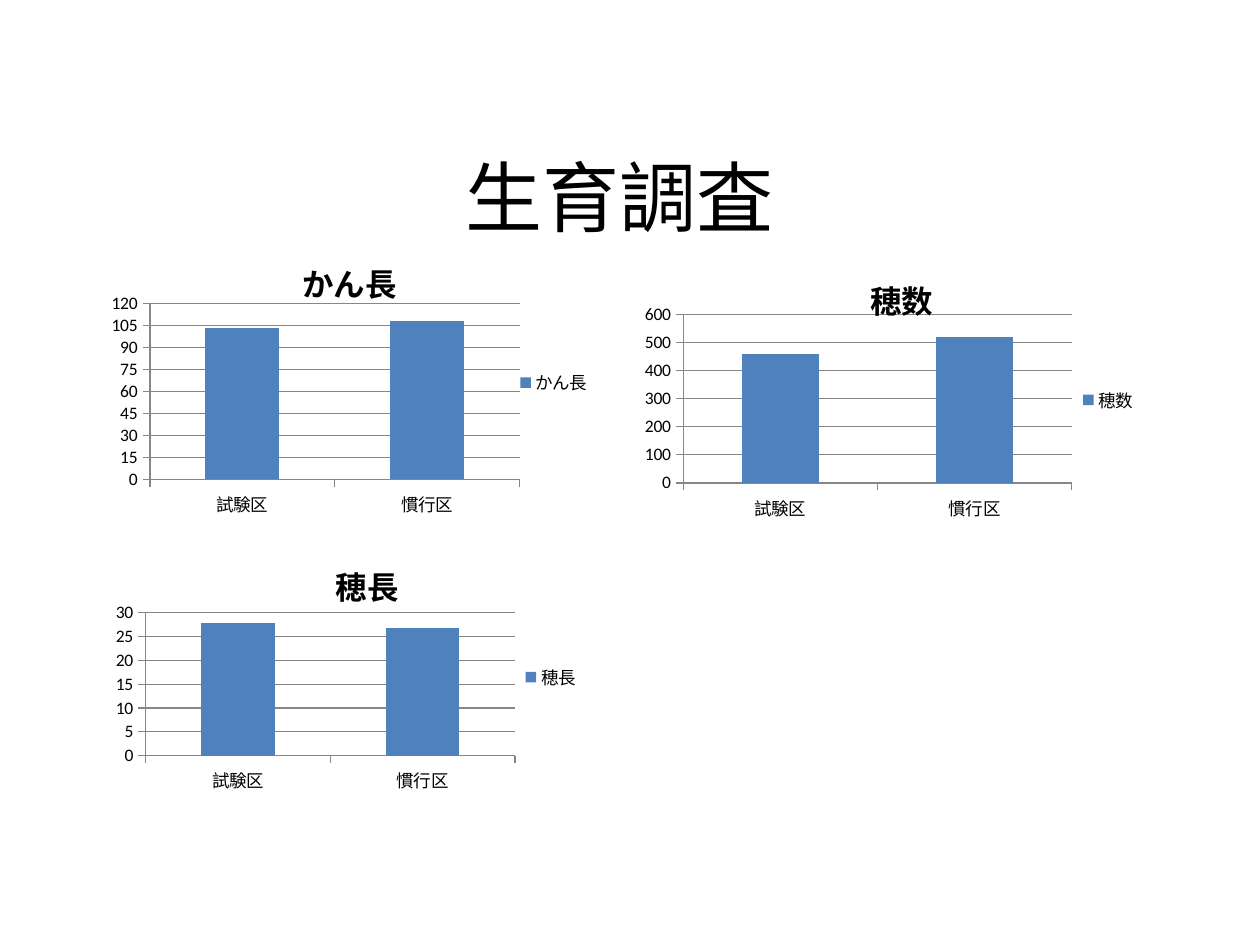
from lxml import etree
from pptx import Presentation
from pptx.chart.data import CategoryChartData
from pptx.dml.color import RGBColor
from pptx.enum.chart import XL_CHART_TYPE, XL_LEGEND_POSITION, XL_TICK_MARK
from pptx.enum.text import MSO_ANCHOR, PP_ALIGN
from pptx.oxml import parse_xml
from pptx.oxml.ns import nsdecls, qn
from pptx.util import Cm, Pt

BLACK = RGBColor(0x00, 0x00, 0x00)
BLUE = RGBColor(0x4F, 0x81, 0xBD)
GRAY = RGBColor(0x86, 0x86, 0x86)
LATIN_FONT = "Calibri"
TITLE_FONT = "Noto Sans CJK JP"

# Content: box in cm; plot area, heading and legend as fractions of the chart
TITLE = "生育調査"
PLOTS = ["試験区", "慣行区"]
CHARTS = [
    dict(name="かん長", values=(103, 108), box=(1.9, 4.93, 10.21, 5.79),
         top=120, step=15, plot=(0.11, 0.205, 0.73, 0.613),
         heading=(0.4, 0.02), legend=(0.83, 0.42)),
    dict(name="穂数", values=(460, 520), box=(12.7, 5.33, 10.74, 5.41),
         top=600, step=None, plot=(0.1, 0.186, 0.729, 0.629),
         heading=(0.44, 0.01), legend=(0.84, 0.44)),
    dict(name="穂長", values=(27.8, 26.7), box=(1.9, 10.92, 11, 5.41),
         top=None, step=5, plot=(0.094, 0.265, 0.677, 0.533),
         heading=None, legend=(0.78, 0.44)),
]


def place(part, fractions):
    """Fix a chart part at x, y and, for the plot area, width and height."""
    for old in part.findall(qn("c:layout")):
        part.remove(old)
    target = '<c:layoutTarget val="inner"/>' if len(fractions) == 4 else ""
    sizes = "".join(f'<c:{tag} val="{value}"/>'
                    for tag, value in zip("xywh", fractions))
    layout = parse_xml(
        f'<c:layout {nsdecls("c")}><c:manualLayout>{target}'
        '<c:xMode val="edge"/><c:yMode val="edge"/>'
        f'{sizes}</c:manualLayout></c:layout>')
    overlay = part.find(qn("c:overlay"))
    part.insert(0 if overlay is None else part.index(overlay), layout)


def add_column_chart(s, name, values, box, top, step, plot, heading, legend):
    data = CategoryChartData()
    data.categories = PLOTS
    data.add_series(name, values)
    chart = s.shapes.add_chart(XL_CHART_TYPE.COLUMN_CLUSTERED,
                               *map(Cm, box), data).chart
    chart.font.name = LATIN_FONT
    chart.font.size = Pt(10)
    chart.font.color.rgb = BLACK

    # Chart title and legend
    tf = chart.chart_title.text_frame
    tf.text = name
    font = tf.paragraphs[0].runs[0].font
    font.name, font.size, font.bold = LATIN_FONT, Pt(18), True
    font.color.rgb = BLACK
    chart.has_legend = True
    chart.legend.position = XL_LEGEND_POSITION.RIGHT
    chart.legend.include_in_layout = False

    # Axes
    value_axis = chart.value_axis
    value_axis.minimum_scale = 0
    value_axis.maximum_scale = top
    value_axis.major_unit = step
    value_axis.has_major_gridlines = True
    for part in (value_axis, chart.category_axis, value_axis.major_gridlines):
        part.format.line.color.rgb = GRAY
        part.format.line.width = Pt(0.75)
    for axis in (value_axis, chart.category_axis):
        axis.major_tick_mark = XL_TICK_MARK.OUTSIDE

    # Columns
    columns = chart.plots[0]
    columns.gap_width = 150
    columns.vary_by_categories = False
    fill = columns.series[0].format.fill
    fill.solid()
    fill.fore_color.rgb = BLUE

    # Positions inside the chart
    root = chart._chartSpace
    for tag, fractions in (("plotArea", plot), ("title", heading),
                           ("legend", legend)):
        if fractions:
            place(root.find(f"{qn('c:chart')}/{qn('c:' + tag)}"), fractions)


prs = Presentation()
prs.slide_width, prs.slide_height = Cm(25.4), Cm(19.05)
s = prs.slides.add_slide(prs.slide_layouts[5])

# Title
title = s.shapes.title
title.left, title.top, title.width, title.height = map(Cm, (1.9, 2.13, 21.18, 3.61))
tf = title.text_frame
tf.text = TITLE
tf.vertical_anchor = MSO_ANCHOR.MIDDLE
p = tf.paragraphs[0]
p.alignment = PP_ALIGN.CENTER
r = p.runs[0]
r.font.name, r.font.size = TITLE_FONT, Pt(44)
r.font.color.rgb = BLACK
east_asian = etree.SubElement(r.font._element, qn("a:ea"))
east_asian.set("typeface", TITLE_FONT)

# Charts
for item in CHARTS:
    add_column_chart(s, **item)

prs.save("out.pptx")
